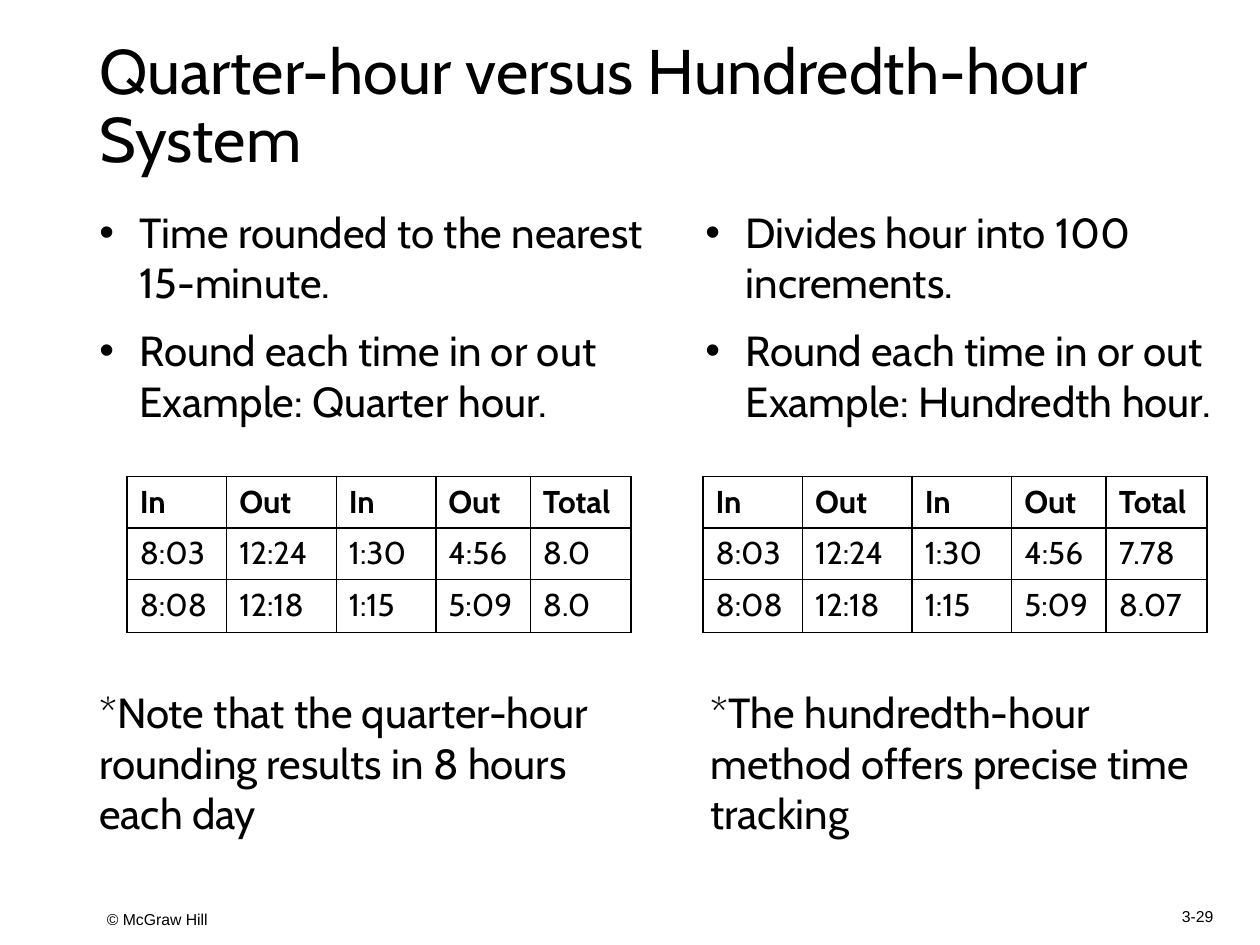
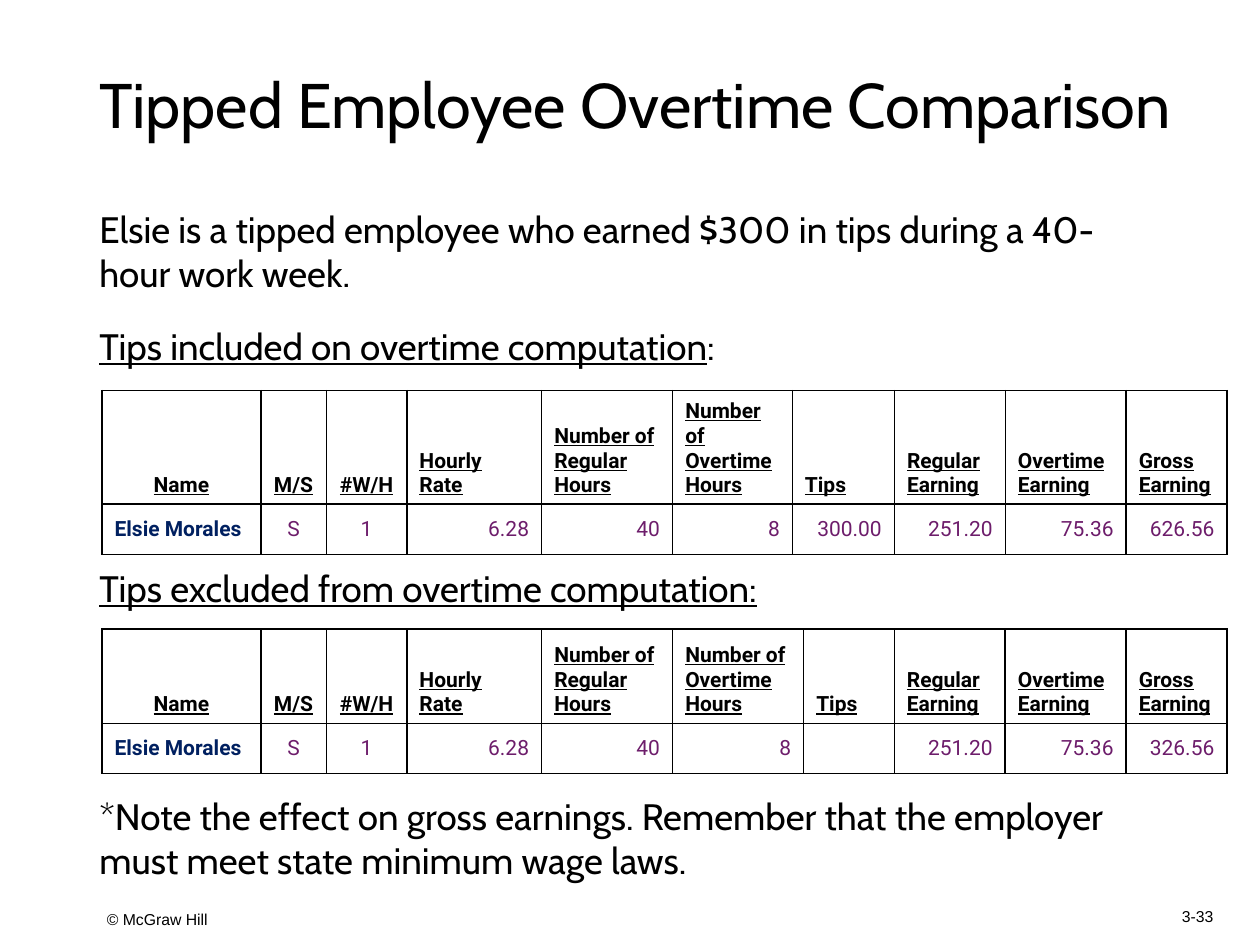
from lxml import etree
from pptx import Presentation
from pptx.dml.color import RGBColor
from pptx.enum.text import MSO_ANCHOR, PP_ALIGN
from pptx.oxml.ns import qn
from pptx.util import Inches, Pt

BLACK = RGBColor(0, 0, 0)
WHITE = RGBColor(255, 255, 255)
NAVY = RGBColor(0x00, 0x20, 0x60)
PLUM = RGBColor(0x6D, 0x1D, 0x6B)
LEFT, CENTER, RIGHT = PP_ALIGN.LEFT, PP_ALIGN.CENTER, PP_ALIGN.RIGHT
TOP, MIDDLE, BOTTOM = MSO_ANCHOR.TOP, MSO_ANCHOR.MIDDLE, MSO_ANCHOR.BOTTOM
HEAD, BODY, FOOT = "Cabin", "Roboto", "Arial"
EDGE = 0.69

TIME_COLS = [0.79, 0.87, 0.79, 0.75, 0.8]
TIME_HEAD = ["In", "Out", "In", "Out", "Total"]
TIMES = [["8:03", "12:24", "1:30", "4:56"], ["8:08", "12:18", "1:15", "5:09"]]
PAY_HEAD = ["Name", "M/S", "#W/H", "Hourly Rate", "Number of Regular Hours",
            "Number of Overtime\nHours", "Tips", "Regular Earning",
            "Overtime Earning", "Gross Earning"]


def style(para, size, font=HEAD, color=BLACK, bold=False, under=False):
    for item in [para, *para.runs]:
        face = item.font
        face.size = Pt(size)
        face.name = font
        face.color.rgb = color
        face.bold = bold
        face.underline = under


def add_bullet(para):
    props = para._p.get_or_add_pPr()
    props.set("marL", str(Inches(0.32)))
    props.set("indent", str(-Inches(0.32)))
    etree.SubElement(props, qn("a:buFont"), typeface="Arial")
    etree.SubElement(props, qn("a:buChar"), char="•")


def add_text(slide, place, lines, size, font=HEAD, anchor=TOP, align=LEFT,
             bullet=False, under=False, space=None):
    box = slide.shapes.add_textbox(*map(Inches, place))
    frame = box.text_frame
    frame.word_wrap = True
    frame.vertical_anchor = anchor
    frame.text = "\n".join(lines)
    for num, para in enumerate(frame.paragraphs):
        para.alignment = align
        if space:
            para.line_spacing = space
        if num:
            para.space_before = Pt(10)
        if bullet:
            add_bullet(para)
        style(para, size, font, under=under)
    return frame


def add_page(deck, title, place, number):
    slide = deck.slides.add_slide(deck.slide_layouts[6])
    add_text(slide, (0.75, 7.14, 8.1, 0.31), ["© McGraw Hill"], 9, FOOT, MIDDLE)
    add_text(slide, (9.09, 7.08, 0.83, 0.38), [number], 9, FOOT, MIDDLE, CENTER)
    add_text(slide, place, [title], 36, anchor=MIDDLE, space=0.9)
    return slide


def add_border(cell):
    props = cell._tc.get_or_add_tcPr()
    for num, side in enumerate(("a:lnL", "a:lnR", "a:lnT", "a:lnB")):
        line = etree.Element(qn(side), w=str(Pt(1)))
        fill = etree.SubElement(line, qn("a:solidFill"))
        etree.SubElement(fill, qn("a:srgbClr"), val=str(BLACK))
        props.insert(num, line)


def add_grid(slide, left, top, cols, heights, rows, look):
    frame = slide.shapes.add_table(
        len(rows), len(cols), Inches(left), Inches(top),
        Inches(sum(cols)), Inches(sum(heights)))
    table = frame.table
    table.first_row = table.horz_banding = False
    for col, width in zip(table.columns, cols):
        col.width = Inches(width)
    for row, height in zip(table.rows, heights):
        row.height = Inches(height)
    for y, row in enumerate(rows):
        for x, text in enumerate(row):
            cell = table.cell(y, x)
            cell.text = text
            cell.fill.solid()
            cell.fill.fore_color.rgb = WHITE
            add_border(cell)
            look(cell, y, x)


def look_time(cell, y, x):
    style(cell.text_frame.paragraphs[0], 18, bold=y == 0)


def look_pay(cell, y, x):
    cell.vertical_anchor = MIDDLE if y else BOTTOM
    if x in (1, 2) or (x, y) == (0, 0):
        align = CENTER
    else:
        align = RIGHT if y and x else LEFT
    color = (PLUM if x else NAVY) if y else BLACK
    for para in cell.text_frame.paragraphs:
        para.alignment = align
        style(para, 12, BODY, color, bold=y == 0 or x == 0, under=y == 0)


def add_method(slide, left, width, points, grid_left, totals, note_left, note):
    add_text(slide, (left, 1.59, width, 1.9), points, 24, bullet=True)
    rows = [TIME_HEAD] + [row + [total] for row, total in zip(TIMES, totals)]
    add_grid(slide, grid_left, 3.78, TIME_COLS, [0.41, 0.41, 0.42], rows, look_time)
    add_text(slide, (note_left, 5.4, 4.2, 1.39), [note], 24)


def add_line(slide, top, text, height=0.82, under=False):
    return add_text(slide, (EDGE, top, 8.62, height), [text], 21, under=under)


def add_pay(slide, top, hours, tips, gross):
    cols = [1.26, 0.52, 0.64, 1.07, 1.04, hours, 1.76 - hours, 0.88, 0.96, 0.8]
    pay = ["Elsie Morales", "S", "1", "6.28", "40", "8", tips, "251.20", "75.36", gross]
    add_grid(slide, 0.81, top, cols, [0.75, 0.4], [PAY_HEAD, pay], look_pay)


def add_hours(deck):
    slide = add_page(deck, "Quarter-hour versus Hundredth-hour System",
                     (EDGE, 0.3, 8.62, 1.11), "3-29")
    add_method(slide, EDGE, 4.62,
               ["Time rounded to the nearest 15-minute.",
                "Round each time in or out Example: Quarter hour."],
               1.01, ["8.0", "8.0"], EDGE,
               "*Note that the quarter-hour rounding results in 8 hours each day")
    add_method(slide, 5.5, 4.22,
               ["Divides hour into 100 increments.",
                "Round each time in or out Example: Hundredth hour."],
               5.58, ["7.78", "8.07"], 5.54,
               "*The hundredth-hour method offers precise time tracking")


def add_tips(deck):
    slide = add_page(deck, "Tipped Employee Overtime Comparison",
                     (EDGE, 0.4, 9.05, 0.92), "3-33")
    add_line(slide, 1.59, "Elsie is a tipped employee who earned $300 in tips "
                          "during a 40-hour work week.")
    para = add_line(slide, 2.52, "Tips included on overtime computation",
                    0.45, True).paragraphs[0]
    para.add_run().text = ":"
    style(para, 21)
    para.runs[0].font.underline = True
    add_pay(slide, 3.1, 0.95, "300.00", "626.56")
    add_line(slide, 4.44, "Tips excluded from overtime computation:", 0.45, True)
    add_pay(slide, 4.99, 1.04, "", "326.56")
    add_line(slide, 6.25, "*Note the effect on gross earnings. Remember that the "
                          "employer must meet state minimum wage laws.")


def main():
    deck = Presentation()
    deck.slide_width = Inches(10)
    deck.slide_height = Inches(7.5)
    add_hours(deck)
    add_tips(deck)
    deck.save("out.pptx")


if __name__ == "__main__":
    main()
